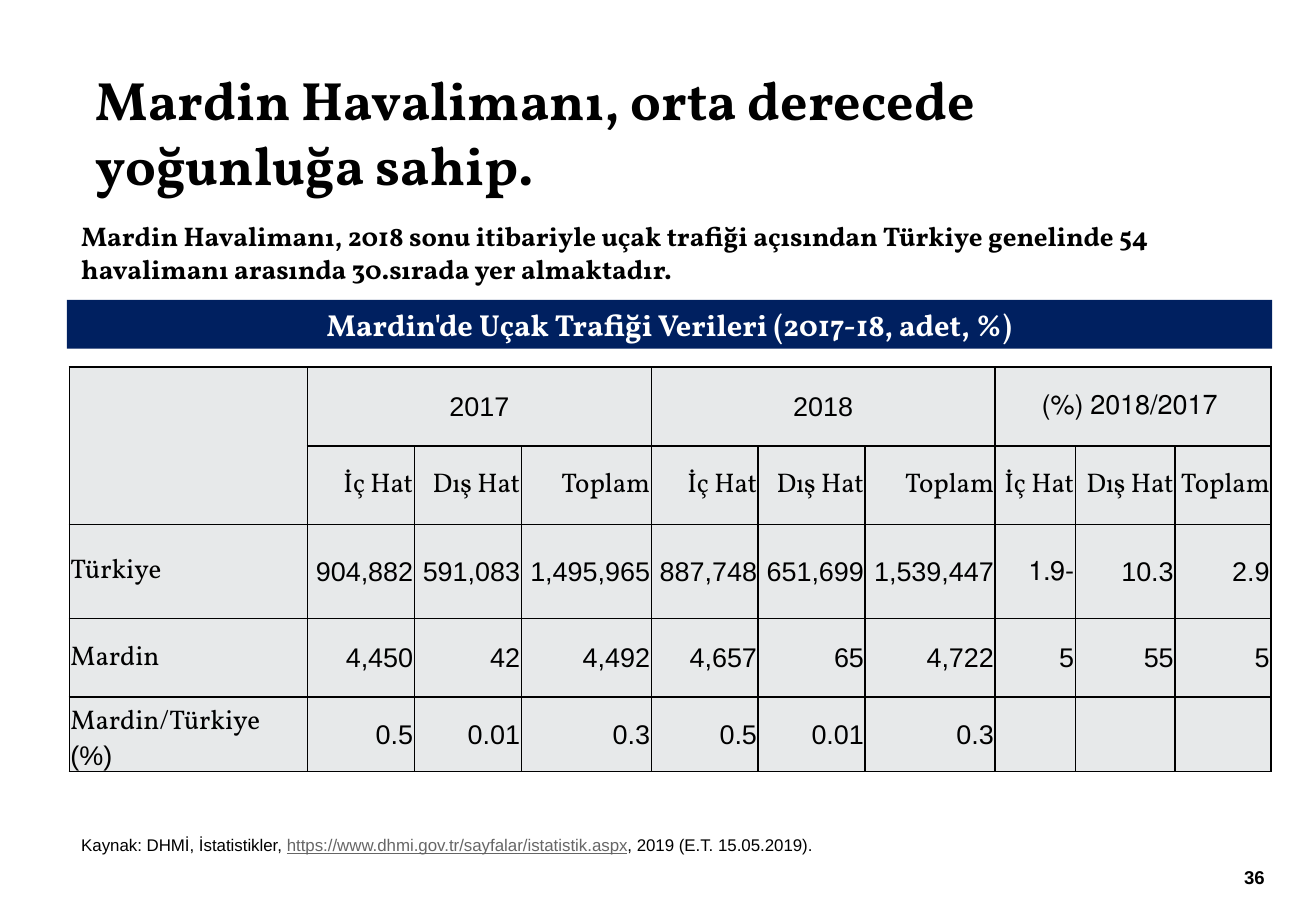
import pptx
import pptx.util
import pptx.dml.color
import pptx.enum.shapes
import pptx.enum.text
import pptx.oxml
import pptx.oxml.ns

Inches, Pt = pptx.util.Inches, pptx.util.Pt
ALIGN = pptx.enum.text.PP_ALIGN
ANCHOR = pptx.enum.text.MSO_ANCHOR
SERIF, SANS = "Vollkorn", "Arial"
GRID = f'''<a:{{}} {pptx.oxml.ns.nsdecls("a")} w="12700"><a:solidFill>
<a:srgbClr val="000000"/></a:solidFill></a:{{}}>'''


def color(code):
    return pptx.dml.color.RGBColor.from_string(code)


class Page:
    def __init__(self, deck):
        self.slide = deck.slides.add_slide(deck.slide_layouts[6])
        self.base = {"name": SERIF, "size": 16, "bold": False, "color": "000000"}

    def fill_in(self, para, runs, **style):
        """Add runs, each a text with its own format values."""
        for text, extra in runs:
            run = para.add_run()
            run.text = text
            for key, value in {**self.base, **style, **extra}.items():
                if key == "color":
                    run.font.color.rgb = color(value)
                else:
                    setattr(run.font, key, Pt(value) if key == "size" else value)

    def text(self, box, runs, **style):
        shape = self.slide.shapes.add_textbox(*map(Inches, box))
        shape.text_frame.word_wrap = True
        self.fill_in(shape.text_frame.paragraphs[0], runs, **style)

    def bar(self, box, text, fill, **style):
        rect = pptx.enum.shapes.MSO_SHAPE.RECTANGLE
        shape = self.slide.shapes.add_shape(rect, *map(Inches, box))
        shape.shadow.inherit = False
        shape.fill.solid()
        shape.fill.fore_color.rgb = color(fill)
        shape.line.fill.background()
        frame = shape.text_frame
        frame.word_wrap = True
        frame.vertical_anchor = ANCHOR.MIDDLE
        frame.paragraphs[0].alignment = ALIGN.CENTER
        self.fill_in(frame.paragraphs[0], [(text, {})], **style)

    def table(self, left, top, cols, rows, fill):
        box = left, top, sum(cols), sum(rows)
        table = self.slide.shapes.add_table(
            len(rows), len(cols), *map(Inches, box)).table
        table.first_row = table.horz_banding = False
        for line, sizes, key in ((table.columns, cols, "width"),
                                 (table.rows, rows, "height")):
            for item, size in zip(line, sizes):
                setattr(item, key, Inches(size))
        for cell in table.iter_cells():
            edge = {"margin_left": 0.01, "margin_right": 0.01,
                    "margin_top": 0.01, "margin_bottom": 0}
            for key, value in edge.items():
                setattr(cell, key, Inches(value))
            cell.vertical_anchor = ANCHOR.MIDDLE
            props = cell._tc.get_or_add_tcPr()
            for side in ("lnL", "lnR", "lnT", "lnB"):
                props.append(pptx.oxml.parse_xml(GRID.format(side, side)))
            cell.fill.solid()
            cell.fill.fore_color.rgb = color(fill)
        return table

    def cell(self, cell, runs, align, rtl=False, **style):
        para = cell.text_frame.paragraphs[0]
        para.alignment = align
        if rtl:
            para._p.get_or_add_pPr().set("rtl", "1")
        self.fill_in(para, runs, **style)


def main():
    deck = pptx.Presentation()
    deck.slide_width, deck.slide_height = Inches(10.83), Inches(7.5)
    page = Page(deck)

    # Traffic table
    cols = [1.96] + [0.88, 0.88, 1.07] * 2 + [0.66, 0.82, 0.79]
    grid = page.table(0.57, 3.02, cols, [0.65, 0.65, 0.77, 0.65, 0.61], "E7E9EA")
    grid.cell(0, 0).merge(grid.cell(1, 0))
    for n, head in enumerate(["2017", "2018", " 2018/2017 (%)"]):
        col = 1 + 3 * n
        grid.cell(0, col).merge(grid.cell(0, col + 2))
        page.cell(grid.cell(0, col), [(head, {})], ALIGN.CENTER,
                  rtl="%" in head, name=SANS)
        for k, kind in enumerate(["İç Hat", "Dış Hat", "Toplam"]):
            page.cell(grid.cell(1, col + k), [(kind, {})], ALIGN.RIGHT)

    data = [
        ("904,882", "591,083", "1,495,965", "887,748", "651,699",
         "1,539,447", "-1.9", "10.3", "2.9"),
        ("4,450", "42", "4,492", "4,657", "65", "4,722", "5", "55", "5"),
        ("0.5", "0.01", "0.3", "0.5", "0.01", "0.3"),
    ]
    names = [[("Türkiye", {})], [("Mardin", {})],
             [("Mardin/Türkiye ", {}), ("(%)", {"name": SANS})]]
    for row, (name, values) in enumerate(zip(names, data), 2):
        page.cell(grid.cell(row, 0), name, ALIGN.LEFT)
        for col, value in enumerate(values, 1):
            page.cell(grid.cell(row, col), [(value, {})], ALIGN.RIGHT,
                      rtl=value.startswith("-"), name=SANS)
    share = grid.cell(4, 0)
    share.vertical_anchor = ANCHOR.BOTTOM
    share.margin_right = Inches(0.15)

    # Title and lead
    page.text((0.69, 0.5, 9.68, 1.18),
              [("Mardin Havalimanı, orta derecede yoğunluğa sahip.", {})],
              size=32, bold=True)
    page.text((0.57, 1.76, 9.89, 0.64),
              [("Mardin Havalimanı, 2018 sonu itibariyle uçak trafiği açısından "
                "Türkiye genelinde 54 havalimanı arasında 30.sırada yer "
                "almaktadır.", {})], bold=True)

    # Source line
    link = {"color": "666666", "underline": True}
    page.text((0.57, 6.82, 9.35, 0.27),
              [("Kaynak: DHMİ, İstatistikler, ", {}),
               ("https://www.dhmi.gov.tr/sayfalar/istatistik.aspx", link),
               (", 2019 (E.T. 15.05.2019).", {})], name=SANS, size=10)

    # Table heading and page number
    page.bar((0.55, 2.47, 9.92, 0.4),
             "Mardin'de Uçak Trafiği Verileri (2017-18, adet, %)",
             "002060", size=18, bold=True, color="FFFFFF")
    page.text((10.14, 7.08, 0.38, 0.27), [("36", {})],
              name=SANS, size=11, bold=True)
    deck.save("out.pptx")


if __name__ == "__main__":
    main()
